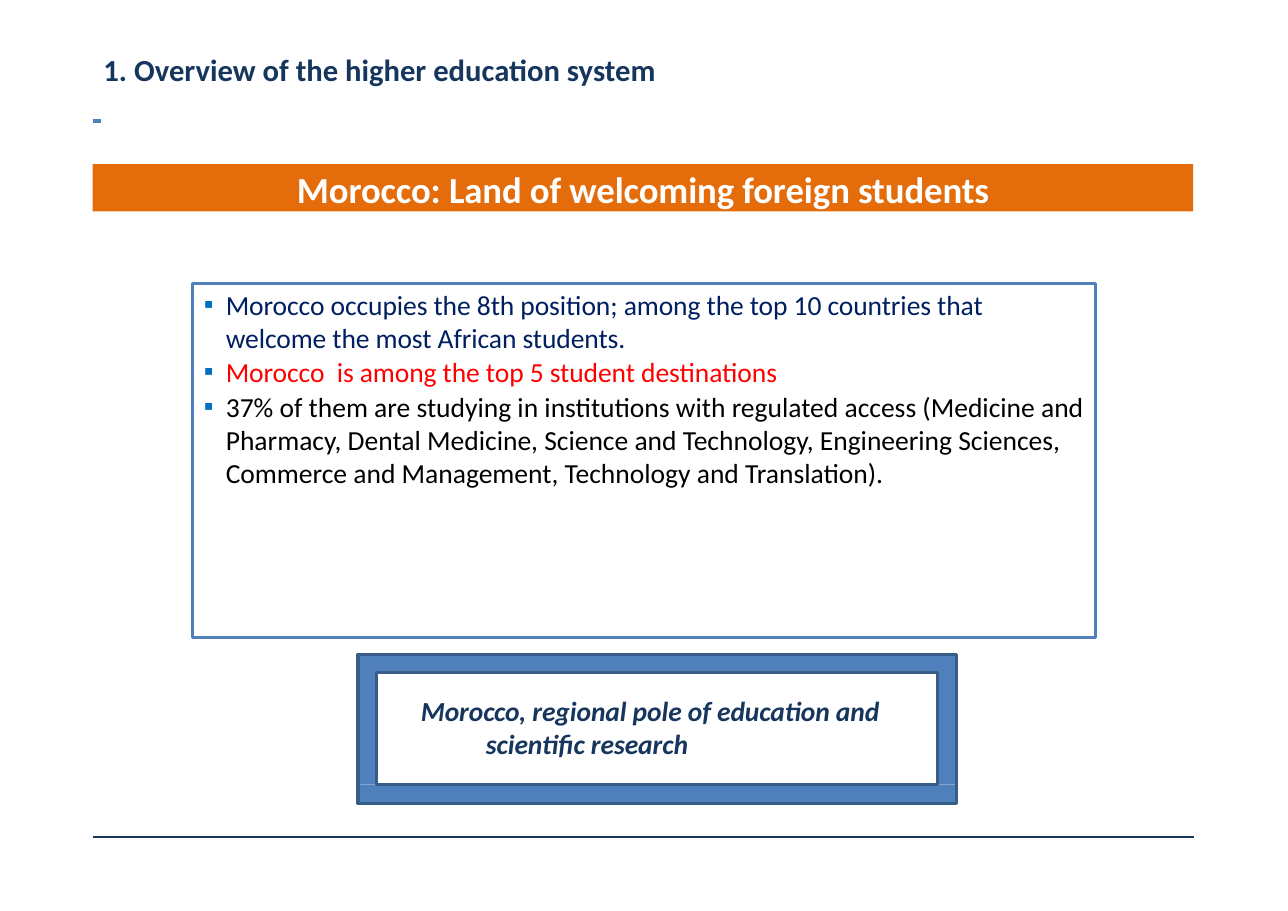
"""Builds the slide on foreign students in Morocco."""
from lxml import etree
from pptx import Presentation, util as u
from pptx.dml.color import RGBColor
from pptx.enum import shapes, text
from pptx.oxml import ns

NAVY, BLUE, WHITE = "16365D", "4F80BC", "FFFFFF"


def tint(code):
    return RGBColor.from_string(code)


def write(shape, items, top=0.02, align=text.PP_ALIGN.LEFT, indent=(0, 0), before=1, mark=None):
    frame = shape.text_frame
    setup = dict(word_wrap=True, vertical_anchor=text.MSO_ANCHOR.TOP, margin_left=0,
                 margin_right=0, margin_bottom=0, margin_top=u.Inches(top))
    for key, val in setup.items():
        setattr(frame, key, val)
    for n, (words, color, space, style) in enumerate(items):
        para = frame.add_paragraph() if n else frame.paragraphs[0]
        para.alignment, para.space_before = align, u.Pt(before)
        props = para._p.get_or_add_pPr()
        for key, val in zip(("marL", "indent"), indent):
            props.set(key, str(u.Inches(val)))
        if mark:
            hue = etree.SubElement(props, ns.qn("a:buClr"))
            etree.SubElement(hue, ns.qn("a:srgbClr"), val="0070BF")
            etree.SubElement(props, ns.qn("a:buFont"), typeface="Times New Roman")
            etree.SubElement(props, ns.qn("a:buChar"), char=mark)
        run = para.add_run()
        run.text = words
        run.font.name = "Calibri"
        run.font.color.rgb = tint(color)
        for key, val in style.items():
            setattr(run.font, key, val)
        run._r.get_or_add_rPr().set("spc", str(space))


deck = Presentation()
deck.slide_width, deck.slide_height = u.Inches(11.69), u.Inches(8.27)
slide = deck.slides.add_slide(deck.slide_layouts[6])
kit = slide.shapes

rules = [(0.84, 10.84, 7.6, NAVY, 1.2), (0.84, 0.92, 1.1, BLUE, 2.2)]
for left, right, y, color, width in rules:
    rule = kit.add_connector(shapes.MSO_CONNECTOR.STRAIGHT, u.Inches(left), u.Inches(y),
                             u.Inches(right), u.Inches(y))
    rule.line.color.rgb = tint(color)
    rule.line.width = u.Pt(width)
    etree.SubElement(rule._element.spPr, ns.qn("a:effectLst"))

kinds = shapes.MSO_SHAPE
blocks = [
    (kinds.RECTANGLE, (0.84, 1.49, 9.99, 0.43), "E46C0A", None),
    (kinds.RECTANGLE, (1.75, 2.57, 8.19, 3.22), None, BLUE),
    (kinds.RECTANGLE, (3.25, 5.94, 5.43, 0.17), BLUE, None),
    (kinds.RECTANGLE, (3.25, 6.11, 0.17, 1.01), BLUE, None),
    (kinds.RECTANGLE, (3.25, 7.12, 5.43, 0.17), BLUE, None),
    (kinds.RECTANGLE, (8.51, 6.11, 0.17, 1.01), BLUE, None),
    (kinds.FRAME, (3.25, 5.94, 5.43, 1.35), None, "385D89"),
]
made = []
for kind, place, fill, edge in blocks:
    block = kit.add_shape(kind, *map(u.Inches, place))
    block.shadow.inherit = False
    if fill:
        block.fill.solid()
        block.fill.fore_color.rgb = tint(fill)
    else:
        block.fill.background()
    if edge:
        block.line.color.rgb = tint(edge)
        block.line.width = u.Pt(2)
    else:
        block.line.fill.background()
    made.append(block)
banner, border = made[0], made[-1]
border.adjustments[0] = 0.125

write(banner, [("Morocco: Land of welcoming foreign students", WHITE, -5,
                dict(size=u.Pt(24), bold=True))],
      align=text.PP_ALIGN.CENTER, before=1.9)

title = kit.add_textbox(*map(u.Inches, (0.83, 0.44, 10.03, 0.4)))
write(title, [("1. Overview of the higher education system", NAVY, 0,
               dict(size=u.Pt(20), bold=True))], indent=(0.11, 0), before=1.1)

body = dict(size=u.Pt(18))
points = [
    ("Morocco occupies the 8th position; among the top 10 countries that welcome "
     "the most African students.", "001F60", -5, body),
    ("Morocco  is among the top 5 student destinations", "FF0000", -5, body),
    ("37% of them are studying in institutions with regulated access (Medicine and "
     "Pharmacy, Dental Medicine, Science and Technology, Engineering Sciences, "
     "Commerce and Management, Technology and Translation).", "000000", 0, body),
]
facts = kit.add_textbox(*map(u.Inches, (1.81, 2.59, 8.07, 1.86)))
write(facts, points, indent=(0.24, -0.2), mark="▪")

motto = kit.add_textbox(*map(u.Inches, (3.41, 6.28, 5.1, 0.63)))
write(motto, [("Morocco, regional pole of education and scientific research", NAVY, -5,
               dict(body, bold=True, italic=True))], indent=(1, -0.59))

deck.save("out.pptx")
